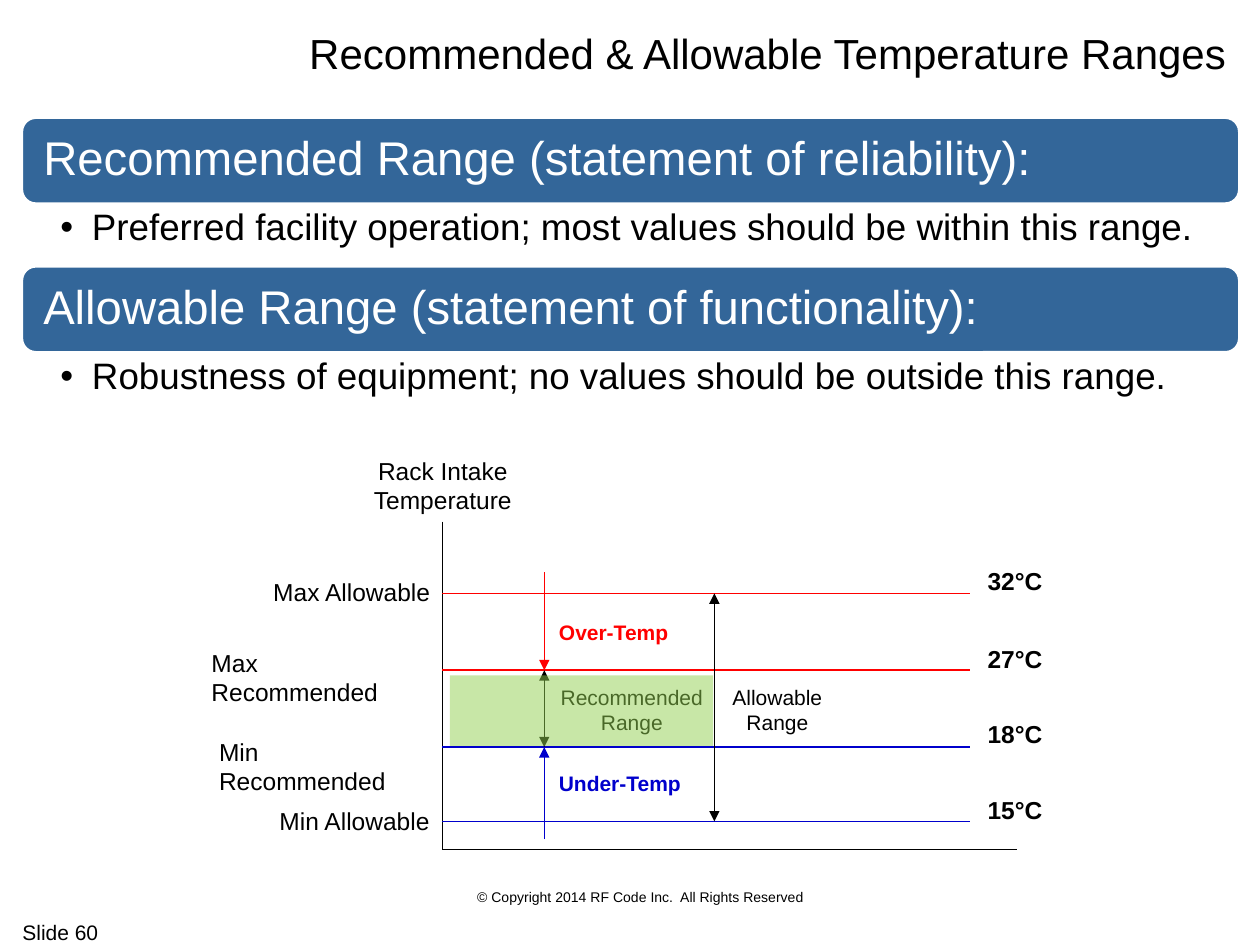
from lxml import etree
from pptx import Presentation
from pptx.dml.color import RGBColor
from pptx.enum.shapes import MSO_CONNECTOR, MSO_SHAPE
from pptx.enum.text import MSO_ANCHOR, MSO_AUTO_SIZE, PP_ALIGN
from pptx.oxml.ns import qn
from pptx.util import Inches, Pt

LEFT, CENTER, RIGHT = PP_ALIGN.LEFT, PP_ALIGN.CENTER, PP_ALIGN.RIGHT
TOP, MIDDLE = MSO_ANCHOR.TOP, MSO_ANCHOR.MIDDLE
NO_AUTOFIT = MSO_AUTO_SIZE.NONE
STRAIGHT = MSO_CONNECTOR.STRAIGHT
RECTANGLE, ROUNDED = MSO_SHAPE.RECTANGLE, MSO_SHAPE.ROUNDED_RECTANGLE

FONT = "Arial"
COLORS = {
    "black": "000000",
    "white": "FFFFFF",
    "banner": "336699",
    "over": "FF0000",
    "under": "0000CC",
    "range": "92D050",
}
AXIS_X, AXIS_TOP, AXIS_BOTTOM = 3.51, 4.14, 6.74
LEVEL_RIGHT = 7.7
MAX_ALLOWABLE, MAX_RECOMMENDED, MIN_RECOMMENDED, MIN_ALLOWABLE = 4.71, 5.32, 5.93, 6.52
ZONE_X, ALLOWABLE_X = 4.32, 5.67


def color(name):
    return RGBColor.from_string(COLORS[name])


def place(shape, left, top, width, height):
    shape.left, shape.top = Inches(left), Inches(top)
    shape.width, shape.height = Inches(width), Inches(height)


def style(paragraph, size, color_name="black", bold=False, align=LEFT):
    paragraph.alignment = align
    font = paragraph.font
    font.name, font.size, font.bold = FONT, Pt(size), bold
    font.color.rgb = color(color_name)


def set_margins(frame, left, top, right, bottom):
    frame.margin_left, frame.margin_top = Inches(left), Inches(top)
    frame.margin_right, frame.margin_bottom = Inches(right), Inches(bottom)


def add_label(slide, lines, box, size=14, color_name="black", bold=False, align=LEFT, wrap=False):
    label = slide.shapes.add_textbox(*map(Inches, box))
    frame = label.text_frame
    frame.word_wrap = wrap
    frame.text = lines
    for paragraph in frame.paragraphs:
        style(paragraph, size, color_name, bold, align)


def add_line(slide, start, end, color_name="black", width=0.75, arrows=()):
    connector = slide.shapes.add_connector(STRAIGHT, *map(Inches, start + end))
    connector.line.color.rgb = color(color_name)
    connector.line.width = Pt(width)
    line = connector.line._get_or_add_ln()
    for arrow in arrows:
        etree.SubElement(line, qn(f"a:{arrow}"), type="triangle")
    etree.SubElement(connector._element.spPr, qn("a:effectLst"))


def set_title(slide, text):
    title = slide.shapes.title
    place(title, 0.08, 0.17, 9.75, 0.5)
    frame = title.text_frame
    frame.auto_size = NO_AUTOFIT
    frame.vertical_anchor = MIDDLE
    frame.text = text
    style(frame.paragraphs[0], 24, align=RIGHT)


def add_banner(slide, text, top):
    banner = slide.shapes.add_shape(ROUNDED, *map(Inches, (0.17, top, 9.67, 0.69)))
    banner.shadow.inherit = False
    banner.fill.solid()
    banner.fill.fore_color.rgb = color("banner")
    banner.line.color.rgb = color("white")
    banner.line.width = Pt(2)
    frame = banner.text_frame
    set_margins(frame, 0.14, 0.11, 0.14, 0.11)
    frame.vertical_anchor = MIDDLE
    frame.text = text
    paragraph = frame.paragraphs[0]
    paragraph.line_spacing = 0.9
    style(paragraph, 27, "white")


def fill_bullet(placeholder, text, top):
    place(placeholder, 0.17, top, 9.67, 0.49)
    frame = placeholder.text_frame
    frame.auto_size = NO_AUTOFIT
    frame.vertical_anchor = TOP
    set_margins(frame, 0.31, 0.04, 0.21, 0.04)
    frame.text = text
    paragraph = frame.paragraphs[0]
    paragraph.line_spacing = 0.9
    paragraph.space_before = Pt(0)
    properties = paragraph._p.get_or_add_pPr()
    properties.set("marL", str(Inches(0.25)))
    properties.set("indent", str(Inches(-0.25)))
    etree.SubElement(properties, qn("a:buChar"), char="•")
    style(paragraph, 21)


def add_recommended_area(slide):
    area = slide.shapes.add_shape(RECTANGLE, *map(Inches, (3.57, 5.36, 2.09, 0.56)))
    area.shadow.inherit = False
    area.fill.solid()
    area.fill.fore_color.rgb = color("range")
    area.line.fill.background()
    fill_color = area._element.spPr.find(qn("a:solidFill"))[0]
    etree.SubElement(fill_color, qn("a:alpha"), val="50000")


def add_range_diagram(slide):
    add_line(slide, (AXIS_X, AXIS_TOP), (AXIS_X, AXIS_BOTTOM))
    add_line(slide, (AXIS_X, AXIS_BOTTOM), (8.07, AXIS_BOTTOM))
    add_label(slide, "Rack Intake\nTemperature", (2.86, 3.57, 1.31, 0.57), align=CENTER)

    levels = [
        (MAX_ALLOWABLE, "over", "Max Allowable", (2.07, 4.53, 1.45, 0.33), False, "32°C", 4.44),
        (MAX_RECOMMENDED, "over", "Max Recommended", (1.58, 5.09, 1.6, 0.57), True, "27°C", 5.06),
        (MIN_RECOMMENDED, "under", "Min Recommended", (1.64, 5.8, 1.6, 0.57), True, "18°C", 5.66),
        (MIN_ALLOWABLE, "under", "Min Allowable", (2.12, 6.35, 1.4, 0.33), False, "15°C", 6.26),
    ]
    for y, color_name, name, box, wrap, degrees, degrees_top in levels:
        add_line(slide, (AXIS_X, y), (LEVEL_RIGHT, y), color_name, 1)
        add_label(slide, name, box, wrap=wrap)
        add_label(slide, degrees, (7.74, degrees_top, 0.64, 0.34), bold=True)

    both_ends = ("headEnd", "tailEnd")
    arrows = [
        (ZONE_X, 4.54, MAX_RECOMMENDED, "over", ("tailEnd",)),
        (ZONE_X, MAX_RECOMMENDED, MIN_RECOMMENDED, "black", both_ends),
        (ZONE_X, 6.66, MIN_RECOMMENDED, "under", ("tailEnd",)),
        (ALLOWABLE_X, MAX_ALLOWABLE, MIN_ALLOWABLE, "black", both_ends),
    ]
    for x, start, end, color_name, ends in arrows:
        add_line(slide, (x, start), (x, end), color_name, arrows=ends)

    zones = [
        ("Over-Temp", (4.33, 4.87, 1.08, 0.3), "over", True),
        ("Recommended\nRange", (4.33, 5.38, 1.37, 0.5), "black", False),
        ("Under-Temp", (4.33, 6.07, 1.18, 0.3), "under", True),
        ("Allowable\nRange", (5.69, 5.38, 0.96, 0.5), "black", False),
    ]
    for text, box, color_name, bold in zones:
        add_label(slide, text, box, 12, color_name, bold, CENTER)
    add_recommended_area(slide)


def main():
    presentation = Presentation()
    presentation.slide_width, presentation.slide_height = Inches(10), Inches(7.5)
    slide = presentation.slides.add_slide(presentation.slide_layouts[3])

    set_title(slide, "Recommended & Allowable Temperature Ranges")
    statements = [
        ("Recommended Range (statement of reliability):",
         "Preferred facility operation; most values should be within this range."),
        ("Allowable Range (statement of functionality):",
         "Robustness of equipment; no values should be outside this range."),
    ]
    for index, (heading, detail) in enumerate(statements):
        top = 0.93 + index * 1.18
        add_banner(slide, heading, top)
        fill_bullet(slide.placeholders[index + 1], detail, top + 0.69)

    add_range_diagram(slide)
    add_label(slide, "© Copyright 2014 RF Code Inc.  All Rights Reserved",
              (3.42, 7, 3.33, 0.23), 8, align=CENTER, wrap=True)
    add_label(slide, "Slide 60", (0.08, 7.25, 2, 0.3), 12, wrap=True)
    presentation.save("out.pptx")


if __name__ == "__main__":
    main()
